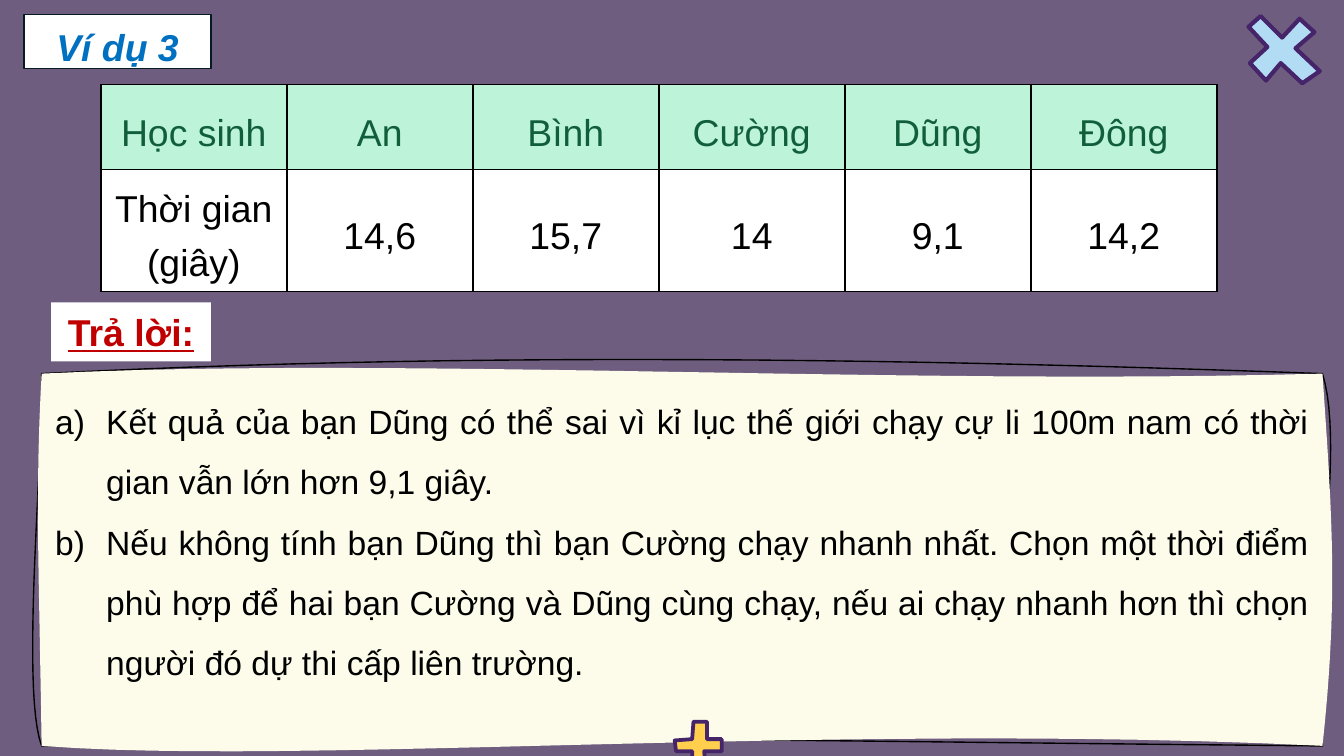
import pptx
import pptx.dml.color
import pptx.enum.shapes
import pptx.enum.text
import pptx.oxml
import pptx.oxml.ns
import pptx.util

RGBColor = pptx.dml.color.RGBColor
ALIGN = pptx.enum.text.PP_ALIGN
ANCHOR = pptx.enum.text.MSO_ANCHOR

WIDTH, HEIGHT = pptx.util.Inches(10), pptx.util.Inches(5.625)
FONT = "Arial"
PURPLE = RGBColor(0x6E, 0x5D, 0x7F)
DARK_PURPLE = RGBColor(0x46, 0x24, 0x6A)
SKY = RGBColor(0xB2, 0xDC, 0xF3)
YELLOW = RGBColor(0xFF, 0xCF, 0x4D)
CREAM = RGBColor(0xFD, 0xFC, 0xEA)
MINT = RGBColor(0xBC, 0xF3, 0xD9)
GREEN = RGBColor(0x11, 0x5F, 0x3A)
BLUE = RGBColor(0x00, 0x70, 0xC0)
RED = RGBColor(0xC0, 0x00, 0x00)
NAVY = RGBColor(0x06, 0x1A, 0x24)
BLACK = RGBColor(0, 0, 0)
WHITE = RGBColor(255, 255, 255)

RESULTS = [
    ["Học sinh", "An", "Bình", "Cường", "Dũng", "Đông"],
    ["Thời gian (giây)", "14,6", "15,7", "14", "9,1", "14,2"],
]
ANSWERS = [
    "Kết quả của bạn Dũng có thể sai vì kỉ lục thế giới chạy cự li 100m nam "
    "có thời gian vẫn lớn hơn 9,1 giây.",
    "Nếu không tính bạn Dũng thì bạn Cường chạy nhanh nhất. Chọn một thời điểm "
    "phù hợp để hai bạn Cường và Dũng cùng chạy, nếu ai chạy nhanh hơn thì chọn "
    "người đó dự thi cấp liên trường.",
]
CORNERS = [(3.1, 27.8), (98.4, 27.8), (98.4, 55.5), (3.1, 55.5)]
PANEL_OUTLINE = [
    [(32.5, 26.3), (63.2, 26.5)], [(100.2, 33.7), (97.3, 46.2)],
    [(54.8, 55.1), (21, 54.4)], [(1.5, 51.2), (3.3, 33.2)],
]
PANEL_FILL = [
    [(30.1, 26.5), (66.7, 28.7)], [(99.1, 38.1), (99.6, 44.4)],
    [(62.1, 53.7), (22.5, 57)], [(2.9, 41.9), (2.6, 36.9)],
]
CROSS = [
    (93.8, 1.2), (95.4, 2.8), (96.7, 1.4), (97.8, 2.4), (96.4, 3.6), (98.2, 5.3),
    (96.9, 6.2), (95.3, 4.7), (94.2, 6), (93, 4.7), (94.3, 3.5), (92.9, 2),
]
PLUS = [
    (51.6, 53.7), (52.6, 53.7), (52.6, 55), (53.7, 55), (53.7, 55.9), (52.4, 55.9),
    (52.5, 57.4), (51.5, 57.4), (51.5, 55.9), (50.3, 55.9), (50.2, 55.1), (51.5, 55),
]


def share(percent):
    """Turn a percentage of the slide's width into a length."""
    return pptx.util.Emu(round(WIDTH * percent / 100))


def apply_formats(target, formats):
    """Set every attribute named in formats on target."""
    for name, value in formats.items():
        setattr(target, name, value)


def write(paragraph, text, size, color, spacing=1.0, align=ALIGN.CENTER, **styles):
    """Fill a paragraph with one formatted run."""
    apply_formats(paragraph, {"alignment": align, "line_spacing": spacing})
    run = paragraph.add_run()
    run.text = text
    run.font.color.rgb = color
    apply_formats(run.font, {"name": FONT, "size": pptx.util.Pt(size), **styles})


def paint(shape, fill=None, line=None, weight=0.75):
    """Give a shape its fill and line and take away its shadow."""
    shape.shadow.inherit = False
    for part, color in ((shape.fill, fill), (shape.line.fill, line)):
        if color is None:
            part.background()
        else:
            part.solid()
            part.fore_color.rgb = color
    if line is not None:
        shape.line.width = pptx.util.Pt(weight)


def add_label(slide, box, text, color, frame_formats, line=None, **styles):
    """Add a white box holding one centred heading."""
    shape = slide.shapes.add_shape(
        pptx.enum.shapes.MSO_SHAPE.RECTANGLE, *map(share, box))
    paint(shape, WHITE, line)
    apply_formats(shape.text_frame, {"word_wrap": True, **frame_formats})
    write(shape.text_frame.paragraphs[0], text, 20, color, bold=True, **styles)


def add_outline(slide, points, **colors):
    """Add a closed freeform through the points."""
    start, *rest = [(share(x), share(y)) for x, y in points]
    builder = slide.shapes.build_freeform(*start, scale=1.0)
    builder.add_line_segments(rest, close=True)
    shape = builder.convert_to_shape()
    paint(shape, **colors)
    return shape


def curved_points(corners, handles, steps=24):
    """Sample the cubic curves that join the corners in a ring."""
    points = []
    for start, (first, second), end in zip(corners, handles, corners[1:] + corners[:1]):
        for step in range(steps):
            t = step / steps
            weights = ((1 - t) ** 3, 3 * t * (1 - t) ** 2, 3 * t * t * (1 - t), t ** 3)
            points.append(tuple(
                sum(weight * value for weight, value in zip(weights, axis))
                for axis in zip(start, first, second, end)))
    return points


def add_borders(cell):
    """Draw a thin black line on each side of a table cell."""
    for side in "LRTB":
        cell._tc.get_or_add_tcPr().append(pptx.oxml.parse_xml(
            f'<a:ln{side} {pptx.oxml.ns.nsdecls("a")} w="12700"><a:solidFill>'
            f'<a:srgbClr val="{BLACK}"/></a:solidFill></a:ln{side}>'))


def add_results(slide, left, top, column_width, row_heights):
    """Add the table of running times."""
    columns = len(RESULTS[0])
    table = slide.shapes.add_table(
        len(RESULTS), columns, share(left), share(top),
        share(column_width * columns), share(sum(row_heights))).table
    for column in table.columns:
        column.width = share(column_width)
    looks = [(MINT, GREEN), (WHITE, BLACK)]
    for row, height, texts, (fill, color) in zip(table.rows, row_heights, RESULTS, looks):
        row.height = share(height)
        for cell, text in zip(row.cells, texts):
            add_borders(cell)
            cell.fill.solid()
            cell.fill.fore_color.rgb = fill
            cell.vertical_anchor = ANCHOR.MIDDLE
            write(cell.text_frame.paragraphs[0], text, 20, color, spacing=1.3)


def add_lettering(paragraph, indent):
    """Number a paragraph with a), b) and a hanging indent."""
    properties = paragraph._p.get_or_add_pPr()
    properties.set("marL", str(indent))
    properties.set("indent", str(-indent))
    namespace = pptx.oxml.ns.nsdecls("a")
    for markup in (
        f'<a:buClr {namespace}><a:srgbClr val="{BLACK}"/></a:buClr>',
        f'<a:buFont {namespace} typeface="{FONT}"/>',
        f'<a:buAutoNum {namespace} type="alphaLcParenR"/>',
    ):
        properties.append(pptx.oxml.parse_xml(markup))


def add_answers(slide):
    """Add the wavy panel with the lettered answers."""
    add_outline(slide, curved_points(CORNERS, PANEL_OUTLINE), line=BLACK)
    panel = add_outline(slide, curved_points(CORNERS, PANEL_FILL), fill=CREAM)
    frame = panel.text_frame
    apply_formats(frame, {
        "word_wrap": True,
        "vertical_anchor": ANCHOR.TOP,
        "margin_left": share(4.1) - panel.left,
        "margin_top": share(28.3) - panel.top,
        "margin_right": panel.left + panel.width - share(97.4),
    })
    for index, answer in enumerate(ANSWERS):
        paragraph = frame.add_paragraph() if index else frame.paragraphs[0]
        write(paragraph, answer, 18, BLACK, spacing=1.5, align=ALIGN.JUSTIFY)
        add_lettering(paragraph, share(3.8))


def main():
    """Build the slide and save it."""
    presentation = pptx.Presentation()
    apply_formats(presentation, {"slide_width": WIDTH, "slide_height": HEIGHT})
    slide = presentation.slides.add_slide(presentation.slide_layouts[6])
    slide.background.fill.solid()
    slide.background.fill.fore_color.rgb = PURPLE

    sides = ("left", "top", "right", "bottom")
    title_frame = {f"margin_{side}": 0 for side in sides}
    title_frame["vertical_anchor"] = ANCHOR.BOTTOM
    add_label(slide, (1.8, 1.1, 13.9, 4), "Ví dụ 3", BLUE, title_frame, NAVY, italic=True)
    add_outline(slide, CROSS, fill=SKY, line=DARK_PURPLE, weight=2.25)
    add_results(slide, 7.5, 6.3, 13.84, (6.3, 9.1))
    add_answers(slide)
    add_label(slide, (3.8, 22.5, 11.9, 4.4), "Trả lời:", RED,
              {"vertical_anchor": ANCHOR.MIDDLE}, underline=True)
    add_outline(slide, PLUS, fill=YELLOW, line=DARK_PURPLE, weight=2)
    presentation.save("out.pptx")


if __name__ == "__main__":
    main()
